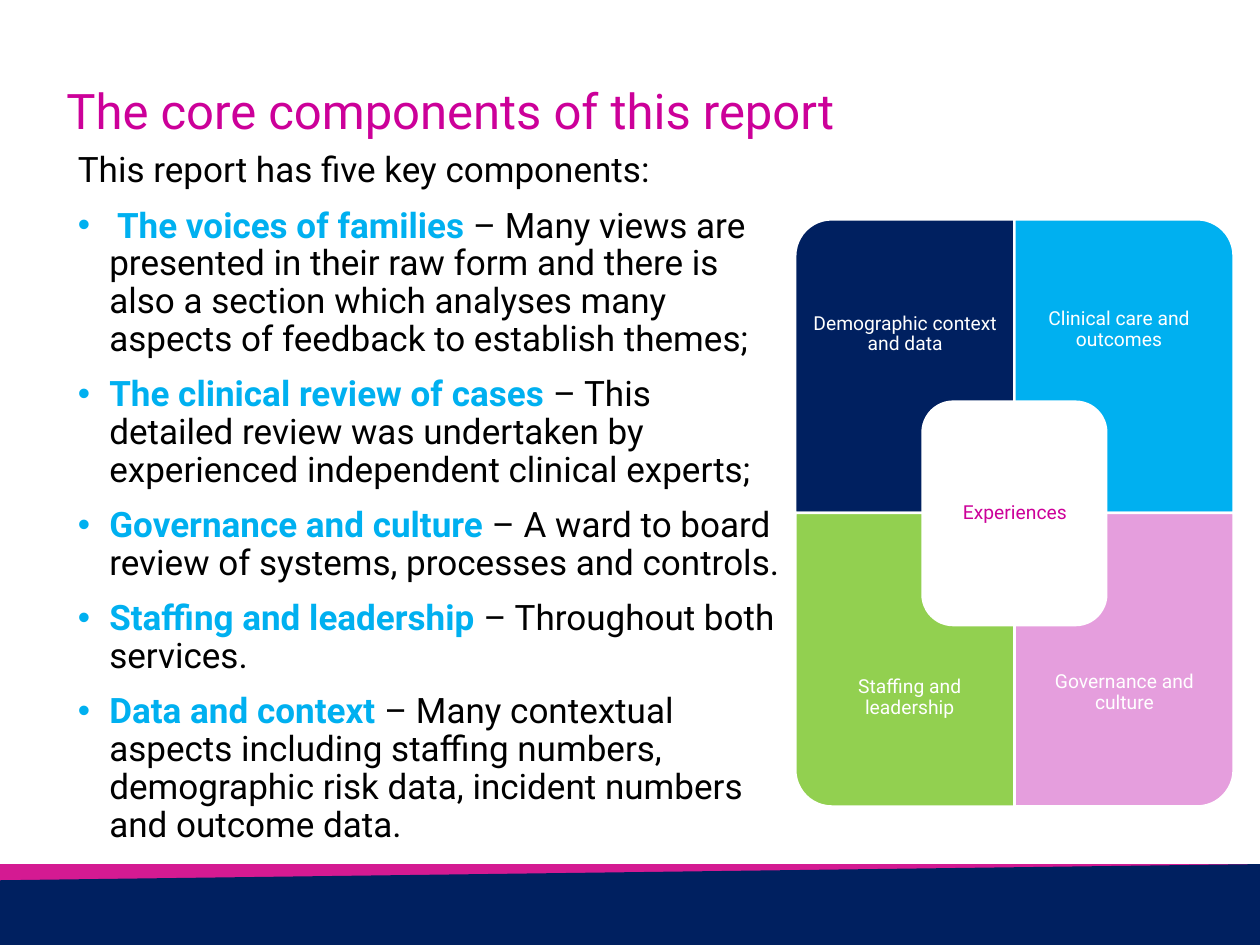
from lxml import etree
from pptx import Presentation
from pptx.dml.color import RGBColor
from pptx.enum.shapes import MSO_SHAPE
from pptx.enum.text import MSO_ANCHOR, PP_ALIGN
from pptx.oxml.ns import qn
from pptx.util import Cm, Pt

RECT = MSO_SHAPE.RECTANGLE
SLOPE = MSO_SHAPE.FLOWCHART_MANUAL_INPUT
ROUND_ONE = MSO_SHAPE.ROUND_1_RECTANGLE
ROUND_ALL = MSO_SHAPE.ROUNDED_RECTANGLE
TOP, MIDDLE = MSO_ANCHOR.TOP, MSO_ANCHOR.MIDDLE
LEFT, CENTER = PP_ALIGN.LEFT, PP_ALIGN.CENTER


class Theme:
    font = "Roboto"
    title_size, body_size, label_size = 28, 20, 11
    magenta, band = "CC0099", "D41A92"
    navy, blue, green, pink = "002060", "00B0F0", "92D050", "E59EDD"
    white, black = "FFFFFF", "000000"


def add_run(p, text, size=Theme.body_size, color=Theme.black, bold=False):
    r = p.add_run()
    r.text = text
    r.font.name = Theme.font
    r.font.size = Pt(size)
    r.font.bold = bold
    r.font.color.rgb = RGBColor.from_string(color)


class Deck:
    """Holds the theme and the slide being built."""

    def __init__(self, slide, theme):
        self.s = slide
        self.theme = theme

    def shape(self, kind, x, y, w, h, fill, line=None, rotation=0):
        sp = self.s.shapes.add_shape(kind, Cm(x), Cm(y), Cm(w), Cm(h))
        sp.shadow.inherit = False
        sp.rotation = rotation
        sp.fill.solid()
        sp.fill.fore_color.rgb = RGBColor.from_string(fill)
        if line:
            sp.line.color.rgb = RGBColor.from_string(line)
            sp.line.width = Pt(1.5)
        else:
            sp.line.fill.background()

    def quadrant(self, x, y, w, h, fill, rotation):
        """Fill the upright box x, y, w, h with its round corner turned by rotation."""
        if rotation % 180:
            x, y, w, h = x + (w - h) / 2, y + (h - w) / 2, h, w
        self.shape(ROUND_ONE, x, y, w, h, fill, self.theme.white, rotation)

    def frame(self, x, y, w, h, anchor=TOP, inset=None):
        tf = self.s.shapes.add_textbox(Cm(x), Cm(y), Cm(w), Cm(h)).text_frame
        tf.word_wrap = True
        tf.vertical_anchor = anchor
        if inset is not None:
            tf.margin_left = tf.margin_right = Cm(inset)
            tf.margin_top = tf.margin_bottom = Cm(inset)
        return tf

    def paragraph(self, tf, first=False, align=LEFT, before=0):
        p = tf.paragraphs[0] if first else tf.add_paragraph()
        p.alignment = align
        p.line_spacing = 0.9
        p.space_before = Pt(before)
        return p

    def text(self, text, box, align=LEFT, anchor=TOP, inset=None, **fmt):
        p = self.paragraph(self.frame(*box, anchor, inset), True, align)
        add_run(p, text, **fmt)

    def bullet(self, p, color):
        pPr = p._p.get_or_add_pPr()
        pPr.set("marL", str(Cm(0.635)))
        pPr.set("indent", str(-Cm(0.635)))
        clr = etree.SubElement(pPr, qn("a:buClr"))
        etree.SubElement(clr, qn("a:srgbClr"), val=color)
        etree.SubElement(pPr, qn("a:buFont"), typeface="Arial")
        etree.SubElement(pPr, qn("a:buChar"), char="•")

    def body(self, intro, items, box):
        tf = self.frame(*box)
        add_run(self.paragraph(tf, True, before=10), intro)
        for term, detail in items:
            p = self.paragraph(tf, before=10)
            self.bullet(p, self.theme.blue)
            add_run(p, term + " ", color=self.theme.blue, bold=True)
            add_run(p, "– " + detail)


COMPONENTS = [
    (" The voices of families", "Many views are presented in their raw form and there is "
     "also a section which analyses many aspects of feedback to establish themes;"),
    ("The clinical review of cases", "This detailed review was undertaken by experienced "
     "independent clinical experts;"),
    ("Governance and culture", "A ward to board review of systems, processes and controls."),
    ("Staffing and leadership", "Throughout both services."),
    ("Data and context", "Many contextual aspects including staffing numbers, demographic "
     "risk data, incident numbers and outcome data."),
]

# Label, fill, column, row, rotation, label box
QUADRANTS = [
    ("Demographic context and data", Theme.navy, 0, 0, 270, (16.03, 4.62, 4.44, 4.24)),
    ("Clinical care and outcomes", Theme.blue, 1, 0, 0, (20.45, 4.42, 4.22, 4.44)),
    ("Staffing and leadership", Theme.green, 0, 1, 180, (16.23, 11.84, 4.22, 4.44)),
    ("Governance and culture", Theme.pink, 1, 1, 90, (20.45, 11.84, 4.44, 4.24)),
]


def main():
    prs = Presentation()
    prs.slide_width, prs.slide_height = Cm(25.4), Cm(19.05)
    theme = Theme()
    deck = Deck(prs.slides.add_slide(prs.slide_layouts[6]), theme)

    deck.text("The core components of this report", (1.09, 1.63, 21.9, 1.63),
              size=theme.title_size, color=theme.magenta)
    deck.body("This report has five key components:", COMPONENTS, (1.32, 2.95, 14.68, 10.08))

    for kind, fill in ((RECT, theme.band), (SLOPE, theme.navy)):
        deck.shape(kind, 0, 17.42, 25.4, 1.63, fill)

    left, top, width, height = 16.03, 4.42, 4.42, 5.92
    label = dict(align=CENTER, anchor=MIDDLE, size=theme.label_size)
    for name, fill, col, row, rotation, box in QUADRANTS:
        deck.quadrant(left + col * width, top + row * height, width, height, fill, rotation)
        deck.text(name, box, inset=0.22, color=theme.white, **label)
    deck.shape(ROUND_ALL, 18.6, 8.1, 3.7, 4.5, theme.white, theme.white)
    deck.text("Experiences", (18.8, 8.28, 3.32, 4.12), inset=0.13,
              color=theme.magenta, **label)

    prs.save("out.pptx")


if __name__ == "__main__":
    main()
